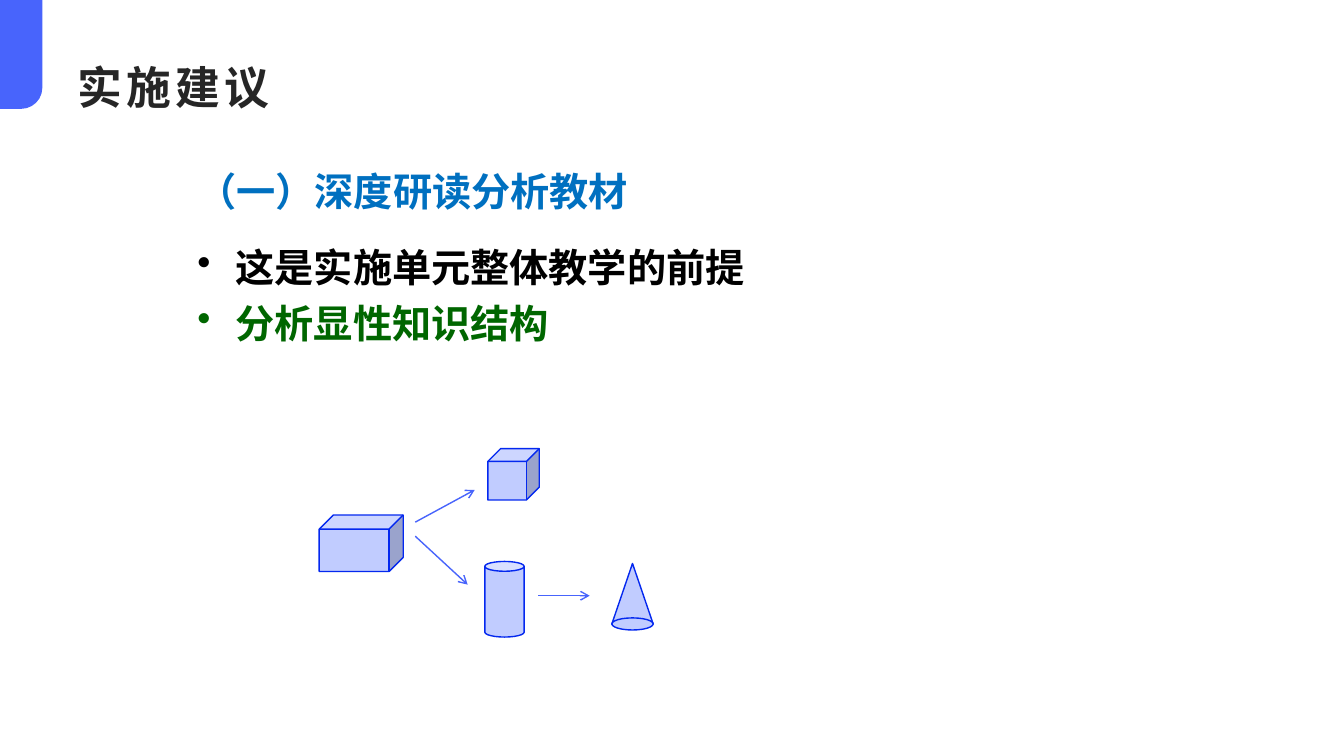
from dataclasses import dataclass

import pptx
import pptx.dml.color
import pptx.enum.shapes
import pptx.enum.text
import pptx.oxml
import pptx.oxml.ns
import pptx.util

RGBColor = pptx.dml.color.RGBColor
Preset = pptx.enum.shapes.MSO_SHAPE
Anchor = pptx.enum.text.MSO_ANCHOR
qn = pptx.oxml.ns.qn

ACCENT = RGBColor(0x48, 0x64, 0xFC)
SOLID_FILL = RGBColor(0xC1, 0xCC, 0xFF)
SOLID_EDGE = RGBColor(0x04, 0x28, 0xEF)
TITLE_GREY = RGBColor(0x26, 0x26, 0x26)
HEADING_BLUE = RGBColor(0x00, 0x70, 0xC0)
BLACK = RGBColor(0x00, 0x00, 0x00)
GREEN = RGBColor(0x00, 0x66, 0x00)

CHINESE_FONT = "Noto Sans CJK SC"
BODY_FONT = "Cabin"

COLUMNS, ROWS = 80, 45
CELL = pptx.util.Inches(1) // 6  # the grid's cells are square
HANGING_INDENT = pptx.util.Inches(0.38)
EDGE_WIDTH = pptx.util.Pt(1)


@dataclass(frozen=True)
class Box:
    column: float
    row: float
    columns: float
    rows: float

    def lengths(self) -> tuple[int, ...]:
        return tuple(round(cells * CELL) for cells in (self.column, self.row, self.columns, self.rows))


@dataclass(frozen=True)
class Line:
    text: str
    color: RGBColor
    size: int = 28
    font: str = BODY_FONT
    line_spacing: float = 1.2
    letter_spacing: int = 0
    bulleted: bool = False


@dataclass(frozen=True)
class TextBlock:
    box: Box
    lines: tuple[Line, ...]
    anchor: Anchor = Anchor.TOP


@dataclass(frozen=True)
class Figure:
    preset: Preset
    box: Box


@dataclass(frozen=True)
class Arrow:
    start: tuple[float, float]
    end: tuple[float, float]


# A quarter turn moves the rounded corner to the bottom right.
TAB = Figure(Preset.ROUND_1_RECTANGLE, Box(-1.98, 1.98, 6.48, 2.52))

TEXT_BLOCKS = (
    TextBlock(Box(11.16, 9.12, 28.8, 3.96), (Line("（一）深度研读分析教材", HEADING_BLUE),)),
    TextBlock(
        Box(4, 2.6, 72, 4.44),
        (Line("实施建议", TITLE_GREY, 32, CHINESE_FONT, 1, 3),),
        Anchor.BOTTOM,
    ),
    TextBlock(
        Box(11.16, 13.62, 56.64, 7.38),
        (
            Line("这是实施单元整体教学的前提", BLACK, bulleted=True),
            Line("分析显性知识结构", GREEN, bulleted=True),
        ),
    ),
)

SOLIDS = (
    Figure(Preset.CUBE, Box(19, 30.66, 5, 3.36)),
    Figure(Preset.CUBE, Box(29.04, 26.7, 3.06, 3.06)),
    Figure(Preset.CAN, Box(28.86, 33.42, 2.34, 4.5)),
    Figure(Preset.ISOSCELES_TRIANGLE, Box(36.42, 33.54, 2.46, 3.6)),
    Figure(Preset.OVAL, Box(36.42, 36.78, 2.46, 0.72)),
)

ARROWS = (
    Arrow((24.72, 31.08), (28.26, 29.16)),
    Arrow((24.72, 31.92), (27.84, 34.8)),
    Arrow((32.04, 35.46), (35.1, 35.46)),
)


def add_bullet(paragraph) -> None:
    properties = paragraph._p.get_or_add_pPr()
    properties.set("marL", str(HANGING_INDENT))
    properties.set("indent", str(-HANGING_INDENT))
    bullet = pptx.oxml.parse_xml(f'<a:buChar {pptx.oxml.ns.nsdecls("a")} char="•"/>')
    properties.find(qn("a:defRPr")).addprevious(bullet)


def format_paragraph(paragraph, line: Line) -> None:
    paragraph.text = line.text
    paragraph.line_spacing = line.line_spacing
    paragraph.font.size = pptx.util.Pt(line.size)
    paragraph.font.bold = True
    paragraph.font.color.rgb = line.color
    paragraph.font.name = line.font
    defaults = paragraph._p.pPr.find(qn("a:defRPr"))
    east_asian = defaults.makeelement(qn("a:ea"), {"typeface": CHINESE_FONT})
    defaults.append(east_asian)
    if line.letter_spacing:
        defaults.set("spc", str(line.letter_spacing * 100))
    if line.bulleted:
        add_bullet(paragraph)


def add_text(shapes, block: TextBlock) -> None:
    frame = shapes.add_textbox(*block.box.lengths()).text_frame
    frame.word_wrap = True
    frame.vertical_anchor = block.anchor
    for index, line in enumerate(block.lines):
        paragraph = frame.add_paragraph() if index else frame.paragraphs[0]
        format_paragraph(paragraph, line)


def add_figure(shapes, figure: Figure, fill: RGBColor, edge: RGBColor | None = None):
    shape = shapes.add_shape(figure.preset, *figure.box.lengths())
    shape.shadow.inherit = False
    shape.fill.solid()
    shape.fill.fore_color.rgb = fill
    if edge is None:
        shape.line.fill.background()
    else:
        shape.line.color.rgb = edge
        shape.line.width = EDGE_WIDTH
    return shape


def add_arrow(shapes, arrow: Arrow) -> None:
    ends = [round(cells * CELL) for cells in (*arrow.start, *arrow.end)]
    connector = shapes.add_connector(pptx.enum.shapes.MSO_CONNECTOR.STRAIGHT, *ends)
    connector.line.color.rgb = ACCENT
    connector.line.width = EDGE_WIDTH
    outline = connector.line._get_or_add_ln()
    outline.append(outline.makeelement(qn("a:tailEnd"), {"type": "arrow"}))
    properties = connector._element.spPr
    properties.append(properties.makeelement(qn("a:effectLst"), {}))


def main() -> None:
    presentation = pptx.Presentation()
    presentation.slide_width = COLUMNS * CELL
    presentation.slide_height = ROWS * CELL
    slide = presentation.slides.add_slide(presentation.slide_layouts[6])

    tab = add_figure(slide.shapes, TAB, ACCENT)
    tab.adjustments[0] = 0.5
    tab.rotation = 90

    for block in TEXT_BLOCKS:
        add_text(slide.shapes, block)

    diagram = slide.shapes.add_group_shape()
    for solid in SOLIDS:
        add_figure(diagram.shapes, solid, SOLID_FILL, SOLID_EDGE)
    for arrow in ARROWS:
        add_arrow(diagram.shapes, arrow)

    presentation.save("out.pptx")


if __name__ == "__main__":
    main()
